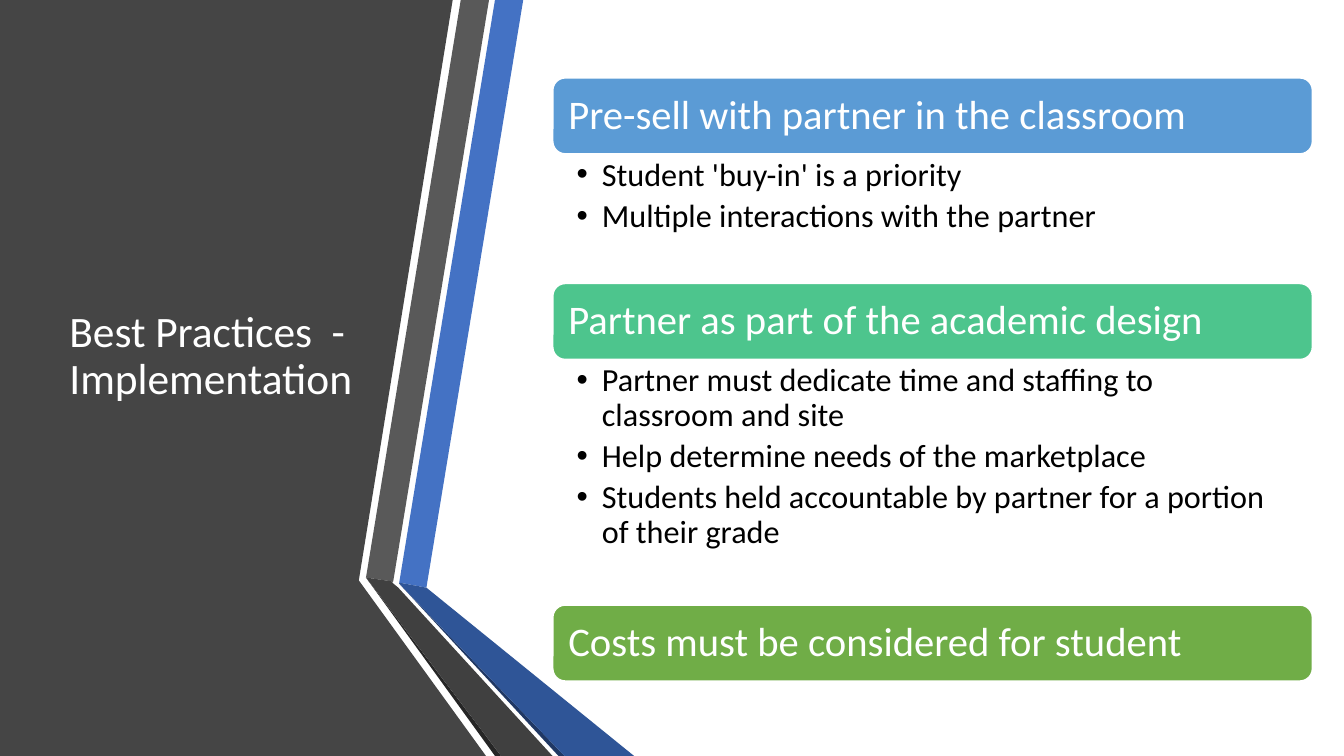
from lxml.etree import SubElement
from pptx import Presentation
from pptx.dml.color import RGBColor
from pptx.enum.shapes import MSO_SHAPE
from pptx.enum.text import MSO_ANCHOR, PP_ALIGN
from pptx.oxml.ns import qn
from pptx.util import Inches, Pt

TITLE = "Best Practices  - Implementation"
PANELS = [
    ("454545", [(0, 0), (4.49, 0), (3.56, 5.75), (3.56, 5.76), (4.82, 7.5), (0, 7.5)]),
    ("4472C4", [(3.96, 5.78), (4.23, 5.83), (5.19, 0), (4.91, 0)]),
    ("595959", [(4.85, 0), (4.57, 0), (3.63, 5.73), (3.9, 5.77)]),
    ("262626", [(3.63, 5.73), (4.91, 7.5), (4.97, 7.5)]),
    ("203864", [(3.96, 5.79), (5.54, 7.5), (5.6, 7.5)]),
    ("2F5597", [(3.96, 5.79), (5.6, 7.5), (6.29, 7.5), (4.23, 5.83), (3.96, 5.78)]),
    ("404040", [(5.48, 7.5), (3.95, 5.83), (3.89, 5.78), (3.9, 5.77),
                (3.63, 5.73), (4.97, 7.5)]),
]
TOPICS = [
    ("5B9BD5", "Pre-sell with partner in the classroom", 1.28, [
        "Student 'buy-in' is a priority",
        "Multiple interactions with the partner",
    ]),
    ("4DC58D", "Partner as part of the academic design", 2.43, [
        "Partner must dedicate time and staffing to classroom and site",
        "Help determine needs of the marketplace",
        "Students held accountable by partner for a portion of their grade",
    ]),
    ("70AD47", "Costs must be considered for student", 0, []),
]
LEFT, TOP, WIDTH, BAR = 5.48, 0.77, 7.54, 0.76

deck = Presentation()
deck.slide_width, deck.slide_height = Inches(13.33), Inches(7.5)
slide = deck.slides.add_slide(deck.slide_layouts[6])
shapes = slide.shapes


def paint(fill, color):
    fill.solid()
    fill.fore_color.rgb = RGBColor.from_string(color)


def panel(color, points):
    spots = [(Inches(x), Inches(y)) for x, y in points]
    pen = shapes.build_freeform(*spots[0], scale=1.0)
    pen.add_line_segments(spots[1:], close=True)
    shape = pen.convert_to_shape()
    shape.shadow.inherit = False
    paint(shape.fill, color)
    shape.line.fill.background()


def write(shape, lines, size, color, pads, anchor, after=0, bullet=False):
    frame = shape.text_frame
    frame.word_wrap = True
    frame.vertical_anchor = anchor
    frame.margin_left, frame.margin_top, frame.margin_right, frame.margin_bottom = map(Inches, pads)
    for i, line in enumerate(lines):
        para = frame.add_paragraph() if i else frame.paragraphs[0]
        para.alignment = PP_ALIGN.LEFT
        para.line_spacing = 0.9
        para.space_after = Pt(after)
        if bullet:
            props = para._p.get_or_add_pPr()
            props.set("marL", str(Inches(0.25)))
            props.set("indent", str(-Inches(0.25)))
            SubElement(props, qn("a:buFont")).set("typeface", "Arial")
            SubElement(props, qn("a:buChar")).set("char", "•")
        run = para.add_run()
        run.text = line
        run.font.name = "Calibri"
        run.font.size = Pt(size)
        run.font.color.rgb = RGBColor.from_string(color)


def topic(color, head, depth, points, top):
    bar = shapes.add_shape(MSO_SHAPE.ROUNDED_RECTANGLE,
                           Inches(LEFT), Inches(top), Inches(WIDTH), Inches(BAR))
    bar.shadow.inherit = False
    paint(bar.fill, color)
    paint(bar.line.fill, "FFFFFF")
    bar.line.width = Pt(1.5)
    write(bar, [head], 29, "FFFFFF", (0.12, 0.12, 0.12, 0.12), MSO_ANCHOR.MIDDLE)
    if points:
        box = shapes.add_textbox(Inches(LEFT), Inches(top + BAR), Inches(WIDTH), Inches(depth))
        write(box, points, 23, "000000", (0.24, 0.04, 0.23, 0.04), MSO_ANCHOR.TOP, 4.6, True)


paint(slide.background.fill, "FFFFFF")
for color, points in PANELS:
    panel(color, points)

title = shapes.add_textbox(Inches(0.59), Inches(0.75), Inches(3.04), Inches(5.58))
write(title, [TITLE], 31, "FFFFFF", (0.1, 0.05, 0.1, 0.05), MSO_ANCHOR.MIDDLE)

top = TOP
for color, head, depth, points in TOPICS:
    topic(color, head, depth, points, top)
    top += BAR + depth

deck.save("out.pptx")
